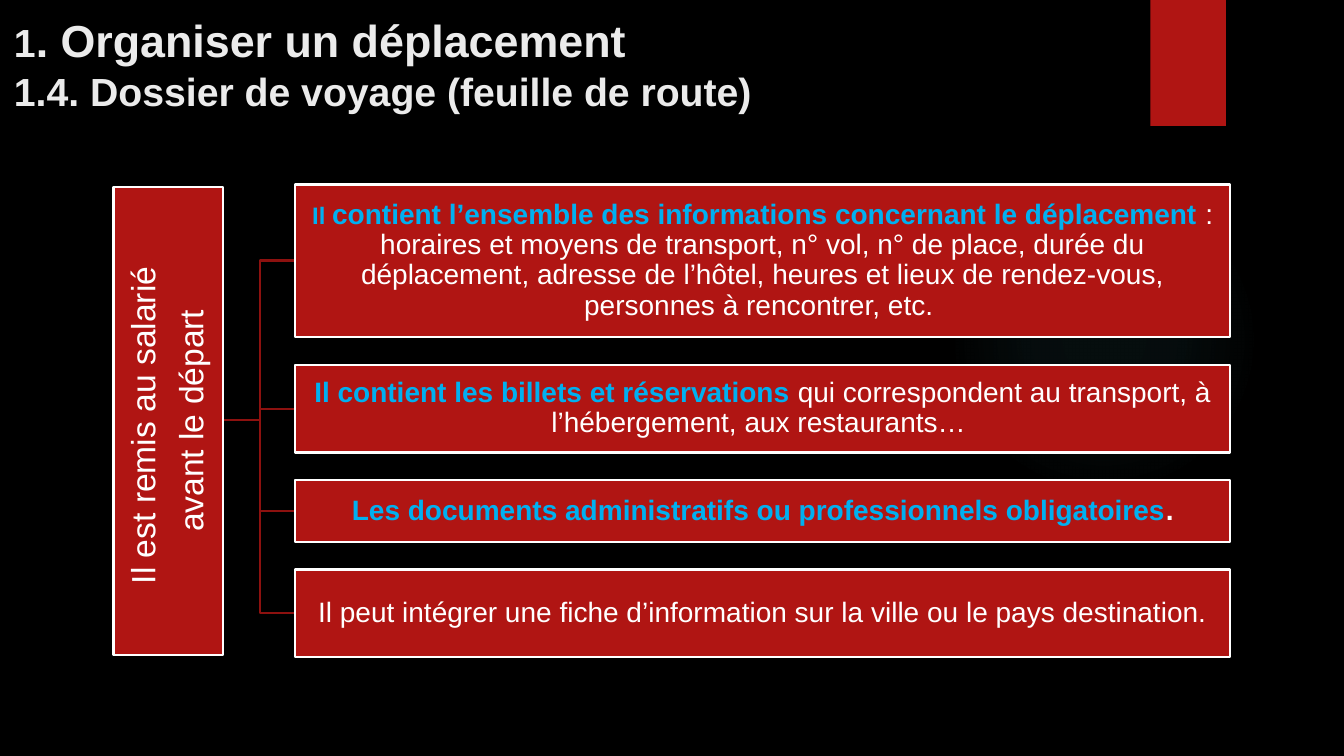
from lxml import etree
from pptx import Presentation
from pptx.dml.color import RGBColor
from pptx.enum.shapes import MSO_SHAPE as SHAPE
from pptx.enum.text import MSO_ANCHOR as ANCHOR, PP_ALIGN as ALIGN
from pptx.oxml import parse_xml
from pptx.oxml.ns import nsdecls, qn
from pptx.util import Inches, Pt

COLORS = {
    "black": "000000",
    "red": "B01513",
    "dark_red": "8D110F",
    "white": "FFFFFF",
    "title": "EBEBEB",
    "blue": "00B0F0",
    "glow": "50B9C1",
}
FONT = "Arial"
ROOT_X, ROOT_Y = 2.22, 4.17
BOX_X, BOX_W = 2.93, 9.27

BOXES = [
    (1.83, 1.51, [
        ("Il ", 17, "blue", True),
        ("contient l’ensemble des informations concernant le déplacement ", 20, "blue", True),
        (": horaires et moyens de transport, n° vol, n° de place, durée du déplacement, "
         "adresse de l’hôtel, heures et lieux de rendez-vous, personnes à rencontrer, etc. ",
         20, "white", False),
    ]),
    (3.62, 0.87, [
        ("Il contient les billets et réservations ", 20, "blue", True),
        ("qui correspondent au transport, à l’hébergement, aux restaurants… ", 20, "white", False),
    ]),
    (4.76, 0.62, [
        ("Les documents administratifs ou professionnels obligatoires", 20, "blue", True),
        (".", 20, "white", True),
    ]),
    (5.65, 0.87, [
        ("Il peut intégrer une fiche d’information sur la ville ou le pays destination.",
         20, "white", False),
    ]),
]


def rgb(name):
    return RGBColor.from_string(COLORS[name])


def add_run(p, text, size, color, bold):
    r = p.add_run()
    r.text = text
    r.font.name = FONT
    r.font.size = Pt(size)
    r.font.bold = bold
    r.font.color.rgb = rgb(color)


def set_frame(tf, anchor, inset_x, inset_y):
    tf.word_wrap = True
    tf.vertical_anchor = anchor
    tf.margin_left = tf.margin_right = Inches(inset_x)
    tf.margin_top = tf.margin_bottom = Inches(inset_y)


def add_plain(s, kind, x, y, w, h):
    sp = s.shapes.add_shape(kind, Inches(x), Inches(y), Inches(w), Inches(h))
    sp.shadow.inherit = False
    sp.line.fill.background()
    sp.fill.solid()
    sp.fill.fore_color.rgb = rgb("red")
    return sp


def add_glow(s, x, y, size):
    sp = add_plain(s, SHAPE.OVAL, x, y, size, size)
    stops = "".join(
        f'<a:gs pos="{pos * 1000}"><a:srgbClr val="{COLORS["glow"]}">'
        f'<a:alpha val="{alpha * 1000}"/></a:srgbClr></a:gs>'
        for pos, alpha in ((0, 7), (36, 6), (69, 0), (100, 0)))
    grad = parse_xml(
        f'<a:gradFill {nsdecls("a")} rotWithShape="1"><a:gsLst>{stops}</a:gsLst>'
        '<a:path path="circle"><a:fillToRect l="50000" t="50000" r="50000" b="50000"/>'
        '</a:path></a:gradFill>')
    props = sp.fill._xPr
    props.replace(props.find(qn("a:solidFill")), grad)


def add_tab(s, x, y, w, h):
    sp = add_plain(s, SHAPE.RECTANGLE, x, y, w, h)
    effects = sp._element.spPr.find(qn("a:effectLst"))
    shadow = etree.SubElement(effects, qn("a:outerShdw"), blurRad=str(Pt(3)),
                              dist=str(Pt(2)), dir="5400000", rotWithShape="0")
    color = etree.SubElement(shadow, qn("a:srgbClr"), val=COLORS["black"])
    etree.SubElement(color, qn("a:alpha"), val="45000")


def add_title(s, x, y, w, h):
    tf = s.shapes.add_textbox(Inches(x), Inches(y), Inches(w), Inches(h)).text_frame
    set_frame(tf, ANCHOR.BOTTOM, 0.1, 0.05)
    p = tf.paragraphs[0]
    add_run(p, "1", 28, "title", True)
    add_run(p, ". Organiser un déplacement", 32, "title", True)
    p.add_line_break()
    add_run(p, "1.4. Dossier de voyage (feuille de route)", 28, "title", True)


def add_elbow(s, end_y):
    mid_x = (ROOT_X + BOX_X) / 2
    points = [(mid_x, ROOT_Y), (mid_x, end_y), (BOX_X, end_y)]
    builder = s.shapes.build_freeform(Inches(ROOT_X), Inches(ROOT_Y))
    builder.add_line_segments([(Inches(x), Inches(y)) for x, y in points], close=False)
    sp = builder.convert_to_shape()
    sp.shadow.inherit = False
    sp.fill.background()
    sp.line.color.rgb = rgb("dark_red")
    sp.line.width = Pt(1.5)


def add_box(s, x, y, w, h, paragraphs, inset=0.01, rotation=0):
    sp = add_plain(s, SHAPE.RECTANGLE, x, y, w, h)
    sp.rotation = rotation
    sp.line.color.rgb = rgb("white")
    sp.line.width = Pt(1.5)
    tf = sp.text_frame
    set_frame(tf, ANCHOR.MIDDLE, inset, inset)
    for i, runs in enumerate(paragraphs):
        p = tf.add_paragraph() if i else tf.paragraphs[0]
        p.alignment = ALIGN.CENTER
        p.line_spacing = 0.9
        p.space_after = Pt(0.35 * runs[0][1])
        for run in runs:
            add_run(p, *run)


def main():
    prs = Presentation()
    prs.slide_width, prs.slide_height = Inches(13.33), Inches(7.5)
    s = prs.slides.add_slide(prs.slide_layouts[6])
    s.background.fill.solid()
    s.background.fill.fore_color.rgb = rgb("black")

    add_glow(s, 9.41, 1.83, 3.08)
    add_tab(s, 11.41, 0, 0.75, 1.25)
    add_title(s, 0.04, 0.06, 11.19, 1.12)

    for y, h, _ in BOXES:
        add_elbow(s, y + h / 2)
    add_box(s, -0.65, 3.63, 4.64, 1.09, [
        [("Il est remis au salarié ", 24, "white", False)],
        [("avant le départ", 24, "white", False)],
    ], inset=0.02, rotation=270)
    for y, h, runs in BOXES:
        add_box(s, BOX_X, y, BOX_W, h, [runs])

    prs.save("out.pptx")


if __name__ == "__main__":
    main()
